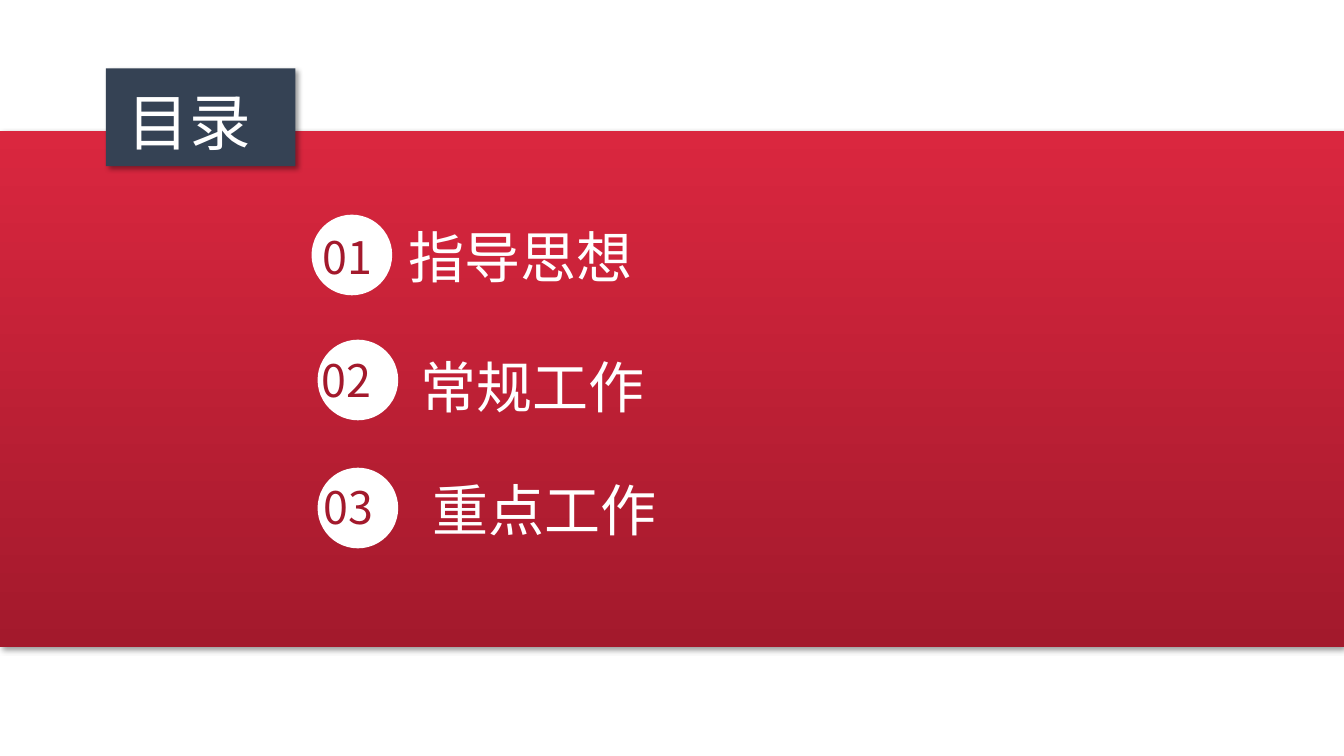
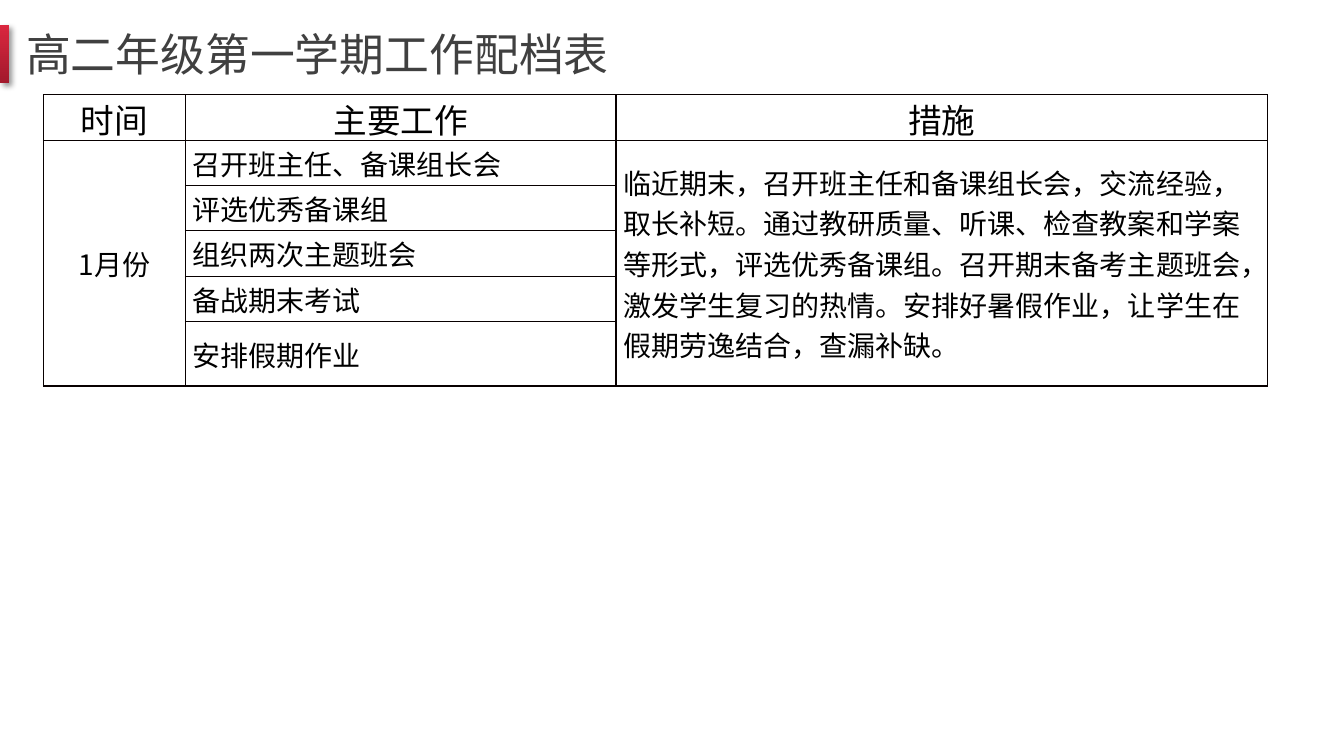
"""Build the contents page and the work schedule page of a school report."""
from dataclasses import dataclass

from lxml import etree
from pptx import Presentation
from pptx import util as u
from pptx.dml.color import RGBColor
from pptx.enum import shapes, text
from pptx.oxml import ns, parse_xml
from pptx.shapes.autoshape import Shape
from pptx.slide import Slide
from pptx.table import _Cell as Cell
from pptx.util import Inches


@dataclass(frozen=True)
class Theme:
    red: str = "DA273F"
    dark_red: str = "A3192C"
    navy: str = "354254"
    white: str = "FFFFFF"
    grey: str = "404040"
    black: str = "000000"
    border: str = "080000"
    font: str = "Noto Sans CJK SC"
    contents_font: str = "Noto Sans CJK JP"
    contents_size: int = 44
    entry_size: int = 40
    title_size: int = 32
    header_size: int = 24
    body_size: int = 20


THEME = Theme()


@dataclass(frozen=True)
class Area:
    left: float
    top: float
    width: float
    height: float

    def lengths(self) -> tuple[u.Length, ...]:
        return tuple(Inches(n) for n in (self.left, self.top, self.width, self.height))


@dataclass(frozen=True)
class Style:
    size: int
    color: str
    font: str = THEME.font
    align: text.PP_ALIGN = text.PP_ALIGN.JUSTIFY


@dataclass(frozen=True)
class Entry:
    number: str
    label: str
    circle: tuple[float, float]
    number_at: tuple[float, float]
    label_at: tuple[float, float]


ENTRIES = (
    Entry("01", "指导思想", (3.09, 2.13), (3.1, 2.23), (3.95, 2.16)),
    Entry("02", "常规工作", (3.15, 3.37), (3.09, 3.45), (4.07, 3.45)),
    Entry("03", "重点工作", (3.15, 4.64), (3.11, 4.71), (4.19, 4.67)),
)
HEADERS = ("时间", "主要工作", "措施")
MONTH = "1月份"
TASKS = ("召开班主任、备课组长会", "评选优秀备课组", "组织两次主题班会", "备战期末考试", "安排假期作业")
MEASURES = (
    "临近期末，召开班主任和备课组长会，交流经验，取长补短。"
    "通过教研质量、听课、检查教案和学案等形式，评选优秀备课组。"
    "召开期末备考主题班会，激发学生复习的热情。"
    "安排好暑假作业，让学生在假期劳逸结合，查漏补缺。"
)
COLUMN_WIDTHS = (1.41, 4.27, 6.46)
ROW_HEIGHTS = (0.45,) * 5 + (0.64,)


def write(frame: text, words: str, style: Style) -> None:
    para = frame.paragraphs[0]
    para.alignment = style.align
    span = para.add_run()
    span.text = words
    span.font.size = u.Pt(style.size)
    span.font.name = style.font
    span.font.color.rgb = RGBColor.from_string(style.color)
    east_asian = etree.SubElement(span.font._element, ns.qn("a:ea"))
    east_asian.set("typeface", style.font)


def add_text(page: Slide, area: Area, words: str, style: Style) -> None:
    box = page.shapes.add_textbox(*area.lengths())
    box.text_frame.word_wrap = True
    box.text_frame.auto_size = text.MSO_AUTO_SIZE.SHAPE_TO_FIT_TEXT
    write(box.text_frame, words, style)


def add_block(page: Slide, kind: shapes.MSO_SHAPE, area: Area, color: str) -> Shape:
    block = page.shapes.add_shape(kind, *area.lengths())
    block.fill.solid()
    block.fill.fore_color.rgb = RGBColor.from_string(color)
    block.line.fill.background()
    block.shadow.inherit = False
    return block


def add_shadow(block: Shape) -> None:
    effects = block.element.spPr.find(ns.qn("a:effectLst"))
    effects.append(parse_xml(
        f'<a:outerShdw {ns.nsdecls("a")} blurRad="{u.Pt(4)}" dist="{u.Pt(3)}" '
        f'dir="2700000" algn="tl" rotWithShape="0"><a:srgbClr val="{THEME.black}">'
        '<a:alpha val="40000"/></a:srgbClr></a:outerShdw>'
    ))


def add_red_band(page: Slide, area: Area) -> None:
    band = add_block(page, shapes.MSO_SHAPE.RECTANGLE, area, THEME.red)
    band.fill.gradient()
    band.fill.gradient_angle = 270
    for stop, color in zip(band.fill.gradient_stops, (THEME.red, THEME.dark_red)):
        stop.color.rgb = RGBColor.from_string(color)
    add_shadow(band)


def add_entry(page: Slide, entry: Entry) -> None:
    add_block(page, shapes.MSO_SHAPE.OVAL, Area(*entry.circle, 0.8, 0.8), THEME.white)
    add_text(page, Area(*entry.number_at, 0.79, 0.64), entry.number,
             Style(THEME.title_size, THEME.dark_red))
    add_text(page, Area(*entry.label_at, 3.73, 0.77), entry.label,
             Style(THEME.entry_size, THEME.white))


def build_contents(page: Slide) -> None:
    add_red_band(page, Area(0, 1.3, 13.33, 5.12))
    plate = add_block(page, shapes.MSO_SHAPE.RECTANGLE, Area(1.05, 0.68, 1.88, 0.97), THEME.navy)
    add_shadow(plate)
    for entry in ENTRIES:
        add_entry(page, entry)
    add_text(page, Area(1.17, 0.78, 1.62, 0.84), "目录",
             Style(THEME.contents_size, THEME.white, THEME.contents_font))


def format_cell(cell: Cell) -> None:
    properties = cell._tc.get_or_add_tcPr()
    for side in "LRTB":
        properties.append(parse_xml(
            f'<a:ln{side} {ns.nsdecls("a")} w="{u.Pt(1)}"><a:solidFill>'
            f'<a:srgbClr val="{THEME.border}"/></a:solidFill></a:ln{side}>'
        ))
    cell.fill.background()
    cell.vertical_anchor = text.MSO_ANCHOR.MIDDLE
    cell.margin_left = cell.margin_right = Inches(0.07)
    cell.margin_top = cell.margin_bottom = 0


def add_schedule(page: Slide, area: Area) -> None:
    frame = page.shapes.add_table(len(ROW_HEIGHTS), len(COLUMN_WIDTHS), *area.lengths())
    table = frame.table
    table.first_row = table.horz_banding = False
    for column, width in zip(table.columns, COLUMN_WIDTHS):
        column.width = Inches(width)
    for row, height in zip(table.rows, ROW_HEIGHTS):
        row.height = Inches(height)
    frame.height = Inches(area.height)
    for cell in table.iter_cells():
        format_cell(cell)
    for column in (0, 2):
        table.cell(1, column).merge(table.cell(len(TASKS), column))

    header = Style(THEME.header_size, THEME.black, align=text.PP_ALIGN.CENTER)
    centred = Style(THEME.body_size, THEME.black, align=text.PP_ALIGN.CENTER)
    body = Style(THEME.body_size, THEME.black, align=text.PP_ALIGN.LEFT)
    for column, words in enumerate(HEADERS):
        write(table.cell(0, column).text_frame, words, header)
    write(table.cell(1, 0).text_frame, MONTH, centred)
    for row, words in enumerate(TASKS, start=1):
        write(table.cell(row, 1).text_frame, words, body)
    write(table.cell(1, 2).text_frame, MEASURES, body)


def build_schedule(page: Slide) -> None:
    add_red_band(page, Area(0, 0.25, 0.09, 0.57))
    add_text(page, Area(0.16, 0.22, 6.71, 0.64), "高二年级第一学期工作配档表",
             Style(THEME.title_size, THEME.grey))
    add_schedule(page, Area(0.43, 0.94, 12.13, 6))


def main() -> None:
    deck = Presentation()
    deck.slide_width, deck.slide_height = Inches(13.33), Inches(7.5)
    for build in (build_contents, build_schedule):
        build(deck.slides.add_slide(deck.slide_layouts[6]))
    deck.save("out.pptx")


if __name__ == "__main__":
    main()
